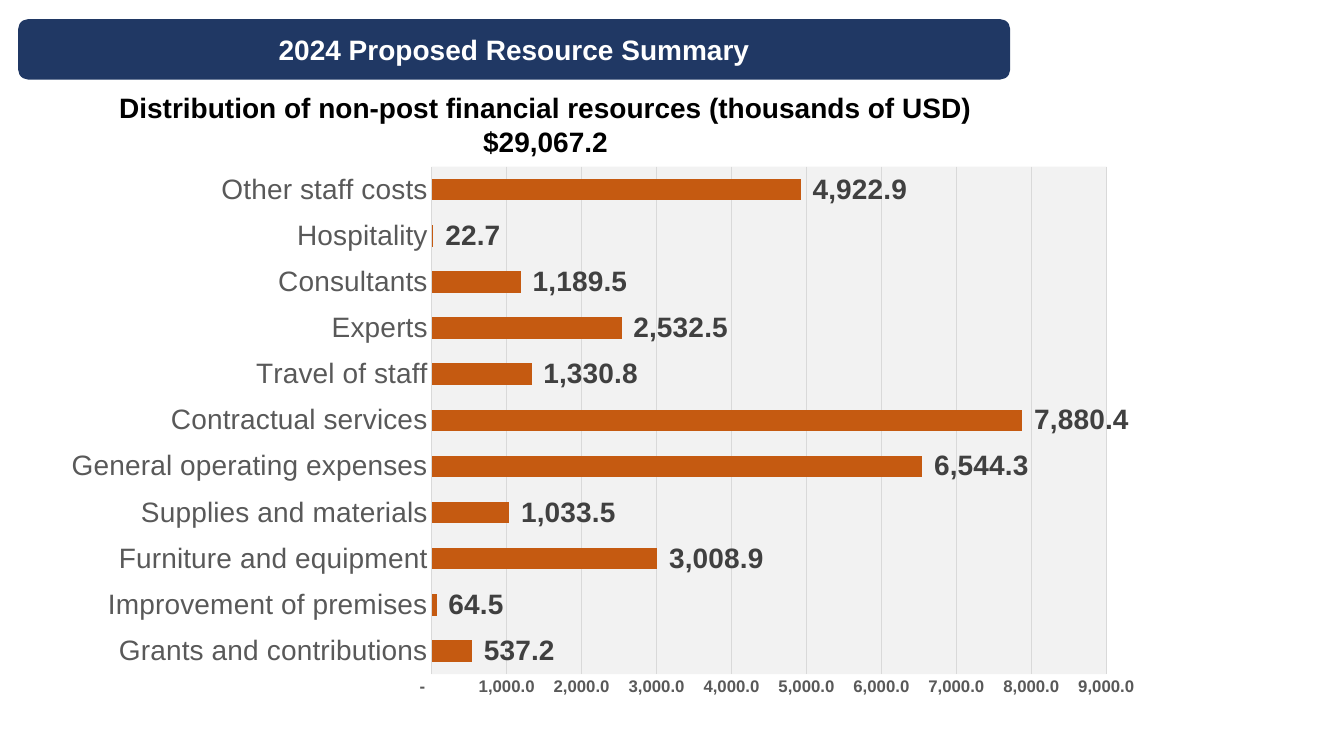
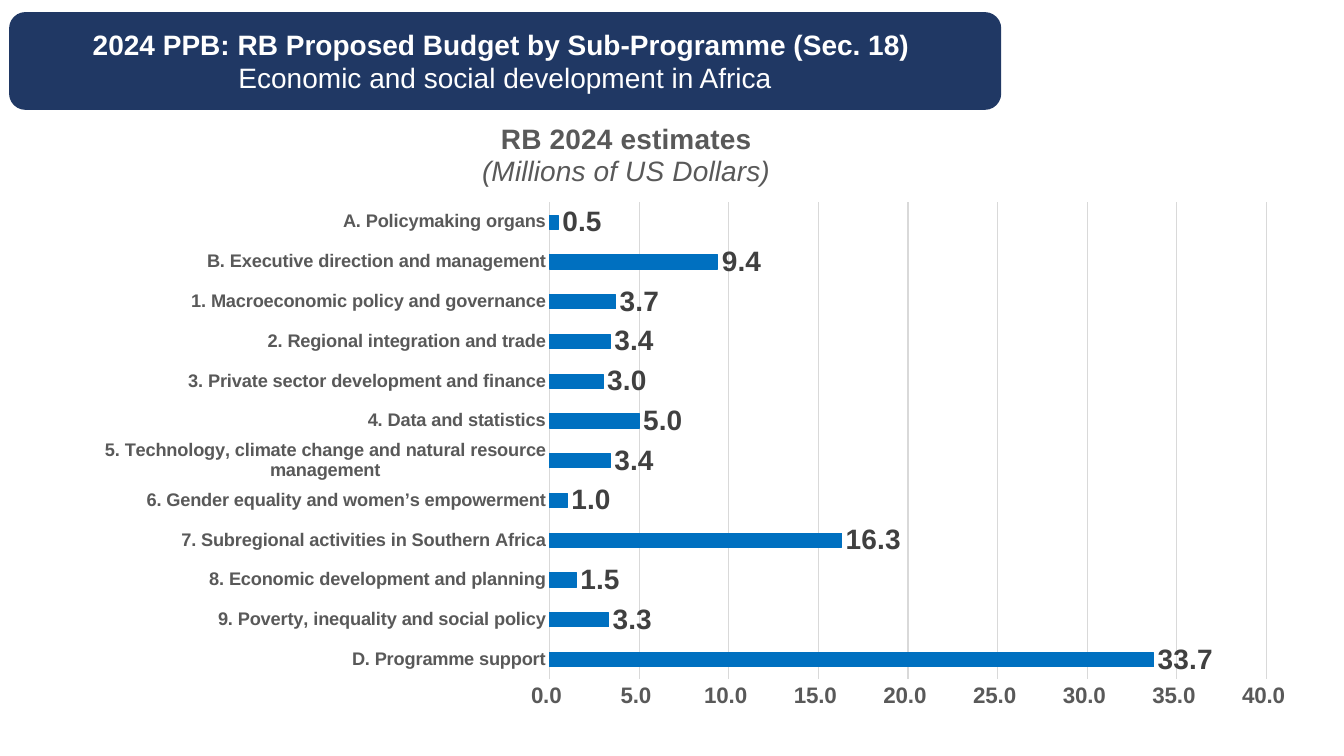
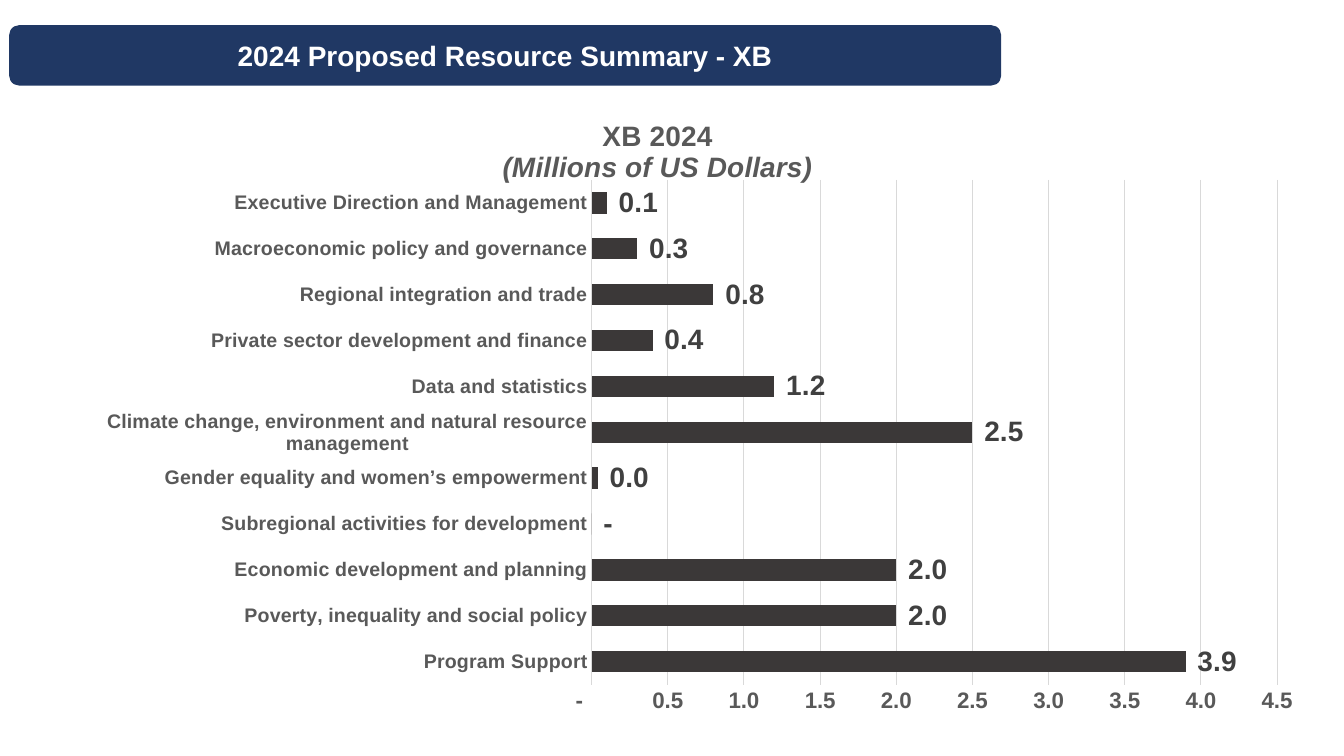
import pptx
import pptx.chart.data
import pptx.dml.color
import pptx.enum.chart
import pptx.enum.shapes
import pptx.enum.text
import pptx.oxml.ns
import pptx.util
from lxml import etree

# Shared look
SLIDE_WIDTH = pptx.util.Inches(13.33)
SLIDE_HEIGHT = pptx.util.Inches(7.5)
FONT = "Arial"
HEADING_SIZE = 20
NAVY, WHITE, BLACK = "203864", "FFFFFF", "000000"
GREY, DARK_GREY, LIGHT_GREY, PALE_GREY = "595959", "404040", "D9D9D9", "F2F2F2"
ORANGE, BLUE, CHARCOAL = "C55A11", "0070C0", "3B3838"
BANNER_WIDTH = 73.82
ACCOUNTING = '_(* #,##0.0_);_(* \\(#,##0.0\\);_(* "-"??_);_(@_)'
ONE_DECIMAL = "#,##0.0_);\\(#,##0.0\\)"

# Content, from top to bottom of each chart
NON_POST = {
    "Other staff costs": 4922.9,
    "Hospitality": 22.7,
    "Consultants": 1189.5,
    "Experts": 2532.5,
    "Travel of staff": 1330.8,
    "Contractual services": 7880.4,
    "General operating expenses": 6544.3,
    "Supplies and materials": 1033.5,
    "Furniture and equipment": 3008.9,
    "Improvement of premises": 64.5,
    "Grants and contributions": 537.2,
}
REGULAR_BUDGET = {
    "A. Policymaking organs": 0.5,
    "B. Executive direction and management": 9.4,
    "1. Macroeconomic policy and governance": 3.7,
    "2. Regional integration and trade": 3.4,
    "3. Private sector development and finance": 3.0,
    "4. Data and statistics": 5.0,
    "5. Technology, climate change and natural resource management": 3.4,
    "6. Gender equality and women’s empowerment": 1.0,
    "7. Subregional activities in Southern Africa": 16.3,
    "8. Economic development and planning": 1.5,
    "9. Poverty, inequality and social policy": 3.3,
    "D. Programme support": 33.7,
}
EXTRA_BUDGET = {
    "Executive Direction and Management": 0.1,
    "Macroeconomic policy and governance": 0.3,
    "Regional integration and trade": 0.8,
    "Private sector development and finance": 0.4,
    "Data and statistics": 1.2,
    "Climate change, environment and natural resource management": 2.5,
    "Gender equality and women’s empowerment": 0.04,
    "Subregional activities for development": 0,
    "Economic development and planning": 2.0,
    "Poverty, inequality and social policy": 2.0,
    "Program Support": 3.9,
}


def color_of(hex_text):
    return pptx.dml.color.RGBColor.from_string(hex_text)


def place(left, top, width, height):
    """Turn percentages of the slide into lengths."""
    return (int(SLIDE_WIDTH * left / 100), int(SLIDE_HEIGHT * top / 100),
            int(SLIDE_WIDTH * width / 100), int(SLIDE_HEIGHT * height / 100))


# Text
def set_font(font, size, color, bold=False, italic=False, name=FONT):
    font.name = name
    font.size = pptx.util.Pt(size)
    font.bold = bold
    font.italic = italic
    font.color.rgb = color_of(color)


def add_line(frame, text, first=False, **style):
    para = frame.paragraphs[0] if first else frame.add_paragraph()
    para.alignment = pptx.enum.text.PP_ALIGN.CENTER
    span = para.add_run()
    span.text = text
    set_font(span.font, HEADING_SIZE, **style)


def add_lines(frame, lines, color):
    for index, (text, style) in enumerate(lines):
        add_line(frame, text, first=index == 0, color=color, **style)


def add_box(page, kind, area, fill, lines, color):
    box = page.shapes.add_shape(kind, *place(*area))
    box.shadow.inherit = False
    box.fill.solid()
    box.fill.fore_color.rgb = color_of(fill)
    box.line.fill.background()
    frame = box.text_frame
    frame.word_wrap = True
    add_lines(frame, lines, color)
    return frame


def add_banner(page, left, top, height, lines):
    frame = add_box(page, pptx.enum.shapes.MSO_SHAPE.ROUNDED_RECTANGLE,
                    (left, top, BANNER_WIDTH, height), NAVY, lines, WHITE)
    frame.vertical_anchor = pptx.enum.text.MSO_ANCHOR.MIDDLE
    frame.auto_size = pptx.enum.text.MSO_AUTO_SIZE.SHAPE_TO_FIT_TEXT
    frame.margin_top = frame.margin_bottom = pptx.util.Inches(0.1)


# Charts
def set_layout(parent, index, inner=False, **shares):
    """Fix a chart part at percentages of the chart's size."""
    qn = pptx.oxml.ns.qn
    for old in parent.findall(qn("c:layout")):
        parent.remove(old)
    layout = etree.Element(qn("c:layout"))
    parent.insert(index, layout)
    manual = etree.SubElement(layout, qn("c:manualLayout"))
    settings = {"layoutTarget": "inner"} if inner else {}
    settings.update(xMode="edge", yMode="edge")
    settings.update({key: str(share / 100) for key, share in shares.items()})
    for key, value in settings.items():
        etree.SubElement(manual, qn("c:" + key)).set("val", value)


def fill_plot(plot_area, color):
    qn = pptx.oxml.ns.qn
    properties = etree.SubElement(plot_area, qn("c:spPr"))
    solid = etree.SubElement(properties, qn("a:solidFill"))
    etree.SubElement(solid, qn("a:srgbClr")).set("val", color)


def set_line(line, color, width):
    line.color.rgb = color_of(color)
    line.width = pptx.util.Pt(width)


def drop_empty_values(plot_area, count):
    """Leave the first series without values, so that they take no room."""
    qn = pptx.oxml.ns.qn
    for series in plot_area.findall(".//" + qn("c:ser"))[:count]:
        series.remove(series.find(qn("c:val")))


def style_axes(chart, category_font, value_size, top, step, number_format, axis_width):
    no_marks = pptx.enum.chart.XL_TICK_MARK.NONE
    for axis in (chart.category_axis, chart.value_axis):
        axis.major_tick_mark = axis.minor_tick_mark = no_marks
    categories, values = chart.category_axis, chart.value_axis
    set_font(categories.tick_labels.font, color=GREY, **category_font)
    set_line(categories.format.line, LIGHT_GREY, axis_width)
    set_font(values.tick_labels.font, value_size, GREY, bold=True)
    values.tick_labels.number_format = number_format
    values.tick_labels.number_format_is_linked = False
    values.minimum_scale, values.maximum_scale, values.major_unit = 0, top, step
    values.format.line.fill.background()
    values.has_major_gridlines = True
    set_line(values.major_gridlines.format.line, LIGHT_GREY, 0.75)


def add_bars(page, area, amounts, plot_share, color, gap, number_format, category_font,
             value_size, top, step, empty_series=0, overlap=0, axis_width=1, outline=0,
             plot_fill=None, title=None, title_at=None):
    data = pptx.chart.data.CategoryChartData()
    data.categories = list(reversed(amounts))
    columns = [[]] * empty_series + [list(reversed(amounts.values()))]
    for number, column in enumerate(columns, start=1):
        data.add_series(f"Series {number}", column)
    kind = pptx.enum.chart.XL_CHART_TYPE.BAR_CLUSTERED
    chart = page.shapes.add_chart(kind, *place(*area), data).chart
    set_font(chart.font, 10, BLACK, name="Calibri")
    chart.has_legend = False
    style_axes(chart, category_font, value_size, top, step, number_format, axis_width)

    # Bars and their values
    plot = chart.plots[0]
    plot.vary_by_categories = False
    plot.gap_width = gap
    plot.overlap = overlap
    bars = plot.series[empty_series]
    bars.format.fill.solid()
    bars.format.fill.fore_color.rgb = color_of(color)
    if outline:
        set_line(bars.format.line, color, outline)
    labels = bars.data_labels
    labels.show_value = True
    labels.position = pptx.enum.chart.XL_LABEL_POSITION.OUTSIDE_END
    labels.number_format = number_format
    labels.number_format_is_linked = False
    set_font(labels.font, HEADING_SIZE, DARK_GREY, bold=True)

    # Plot area and title
    plot_area = chart.element.find(".//" + pptx.oxml.ns.qn("c:plotArea"))
    drop_empty_values(plot_area, empty_series)
    set_layout(plot_area, 0, inner=True, **dict(zip("xywh", plot_share)))
    if plot_fill:
        fill_plot(plot_area, plot_fill)
    chart.has_title = bool(title)
    if title:
        add_lines(chart.chart_title.text_frame, title, GREY)
        chart.chart_title.include_in_layout = False
        title_element = chart.element.find(".//" + pptx.oxml.ns.qn("c:title"))
        set_layout(title_element, 1, **dict(zip("xy", title_at)))


def main():
    deck = pptx.Presentation()
    deck.slide_width, deck.slide_height = SLIDE_WIDTH, SLIDE_HEIGHT
    blank = deck.slide_layouts[6]
    bold, italic = {"bold": True}, {"italic": True}

    # Non-post resources
    page = deck.slides.add_slide(blank)
    add_bars(page, (3.68, 20.67, 82.82, 72.8), NON_POST, (34.35, 1.9, 60.6, 92.2),
             ORANGE, 115, ACCOUNTING, {"size": 20}, 12, 9000, 1000,
             empty_series=1, overlap=-20, plot_fill=PALE_GREY)
    add_banner(page, 1.35, 2.53, 8, [("2024 Proposed Resource Summary", bold)])
    caption = add_box(
        page, pptx.enum.shapes.MSO_SHAPE.RECTANGLE, (3.68, 11.33, BANNER_WIDTH, 7.47), WHITE,
        [("Distribution of non-post financial resources (thousands of USD)", bold),
         ("$29,067.2", bold)], BLACK)
    caption.vertical_anchor = pptx.enum.text.MSO_ANCHOR.TOP

    # Regular budget by sub-programme
    page = deck.slides.add_slide(blank)
    add_banner(page, 0.68, 1.6, 12.93,
               [("2024 PPB: RB Proposed Budget by Sub-Programme (Sec. 18) ", bold),
                ("Economic and social development in Africa", {})])
    add_bars(page, (3.68, 15.6, 92.65, 79.2), REGULAR_BUDGET, (40.15, 14.1, 57.6, 79.7),
             BLUE, 182, ONE_DECIMAL, {"size": 13, "bold": True}, 16, 40, 5,
             empty_series=3, axis_width=0.75, outline=0.75, title_at=(34.5, 0.3),
             title=[("RB 2024 estimates", bold), ("(Millions of US Dollars)", italic)])

    # Extrabudgetary resources
    page = deck.slides.add_slide(blank)
    add_banner(page, 0.68, 3.33, 8, [("2024 Proposed Resource Summary - XB", bold)])
    add_bars(page, (1.35, 13.07, 95.27, 82), EXTRA_BUDGET, (44.85, 13.1, 53.6, 81.4),
             CHARCOAL, 115, ACCOUNTING, {"size": 14, "bold": True}, 16, 4.5, 0.5,
             overlap=-20, title_at=(37.65, 2.75),
             title=[("XB 2024", bold), ("(Millions of US Dollars)", {**bold, **italic})])

    deck.save("out.pptx")


if __name__ == "__main__":
    main()
